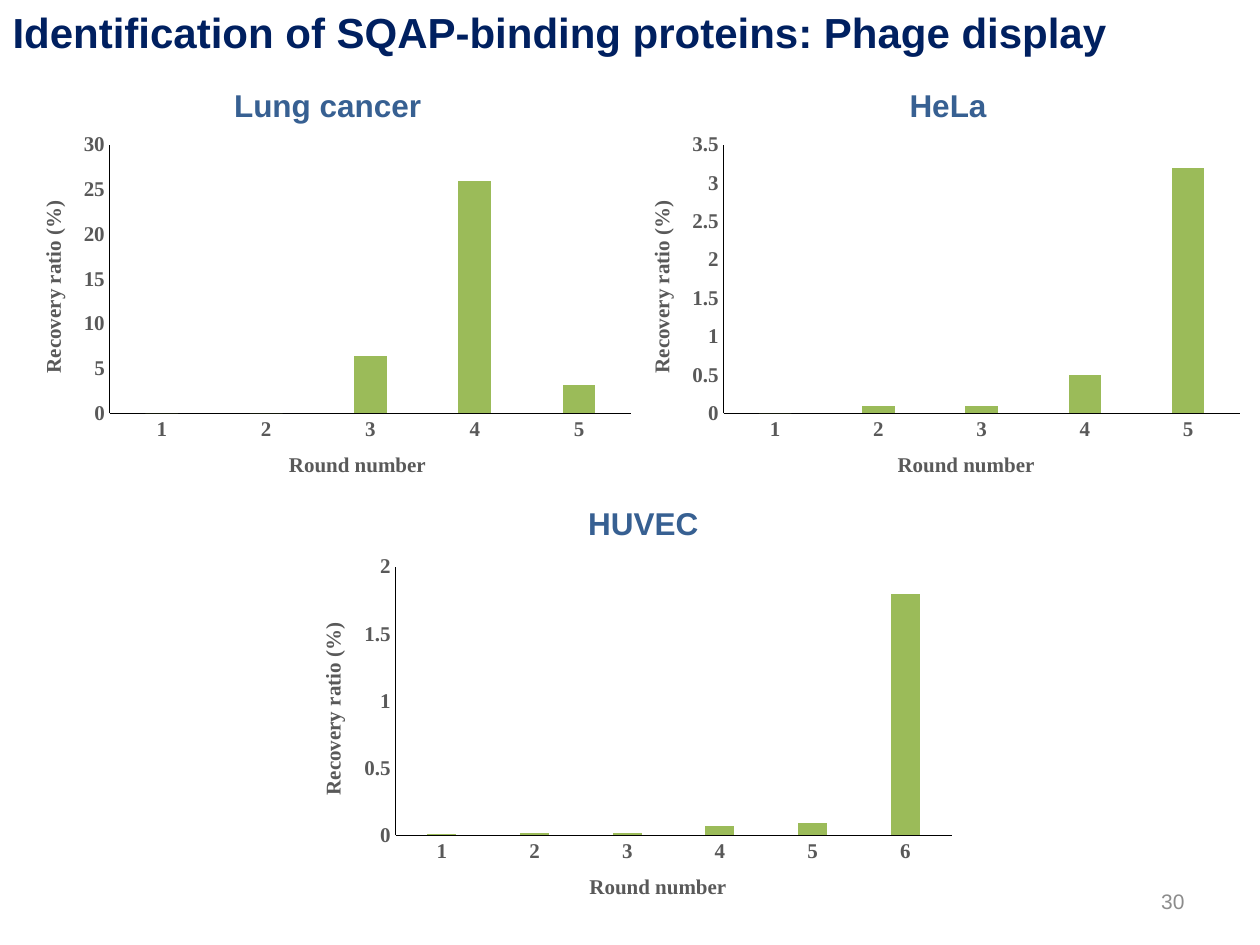
import pptx
import pptx.chart.data
from pptx.dml.color import RGBColor
from pptx.enum.chart import XL_CHART_TYPE, XL_TICK_MARK
from pptx.enum.text import MSO_ANCHOR, PP_ALIGN
from pptx.oxml.ns import qn
from pptx.util import Inches, Pt

NAVY = RGBColor(0x00, 0x20, 0x60)
BLUE = RGBColor(0x37, 0x60, 0x92)
GREEN = RGBColor(0x9B, 0xBB, 0x59)
DARK_GRAY = RGBColor(0x59, 0x59, 0x59)
PAGE_GRAY = RGBColor(0x8C, 0x8C, 0x8C)
BLACK = RGBColor(0, 0, 0)

TITLE = "Identification of SQAP-binding proteins: Phage display"
PAGE_NUMBER = "30"
CATEGORY_TITLE = "Round number"
VALUE_TITLE = "Recovery ratio (%)"
CHART_HEIGHT = 3

# Positions are (left, top, width) for charts, (left, top, width, height) for labels.
PANELS = [
    {"label": "Lung cancer", "label_at": (1.76, 0.63, 1.7, 0.4),
     "chart_at": (0.11, 1, 5), "ratios": (0, 0, 6.4, 26, 3.2), "scale": None},
    {"label": "HeLa", "label_at": (7.12, 0.63, 0.82, 0.4),
     "chart_at": (4.94, 1, 5), "ratios": (0, 0.1, 0.1, 0.5, 3.2), "scale": None},
    {"label": "HUVEC", "label_at": (4.57, 3.95, 1.09, 0.4),
     "chart_at": (2.33, 4.35, 5.33),
     "ratios": (0.01, 0.02, 0.02, 0.07, 0.09, 1.8), "scale": (2, 0.5)},
]


def place(shape, at):
    shape.left, shape.top, shape.width, shape.height = map(Inches, at)


def format_font(font, size, color, name="Arial", bold=True):
    font.name, font.size, font.bold = name, Pt(size), bold
    font.color.rgb = color


def write(frame, text, size=18, color=BLUE, name="Arial", bold=True,
          align=PP_ALIGN.LEFT, anchor=MSO_ANCHOR.TOP, wrap=False):
    frame.word_wrap = wrap
    frame.vertical_anchor = anchor
    para = frame.paragraphs[0]
    para.alignment = align
    span = para.add_run()
    span.text = text
    format_font(span.font, size, color, name, bold)


def add_text(page, at, text, **style):
    box = page.shapes.add_textbox(*map(Inches, at))
    write(box.text_frame, text, **style)


def style_axis(axis, title):
    axis.has_major_gridlines = False
    axis.major_tick_mark = axis.minor_tick_mark = XL_TICK_MARK.NONE
    axis.format.line.color.rgb = BLACK
    axis.format.line.width = Pt(0.75)
    format_font(axis.tick_labels.font, 12, DARK_GRAY, "Times New Roman")
    write(axis.axis_title.text_frame, title, size=12, color=DARK_GRAY,
          name="Times New Roman", align=PP_ALIGN.CENTER, wrap=True)


def add_recovery_chart(page, at, ratios, scale):
    data = pptx.chart.data.CategoryChartData()
    data.categories = [str(number) for number in range(1, len(ratios) + 1)]
    data.add_series("Series 1", ratios)
    chart = page.shapes.add_chart(
        XL_CHART_TYPE.COLUMN_CLUSTERED, *map(Inches, (*at, CHART_HEIGHT)), data).chart
    chart.has_title = chart.has_legend = False
    format_font(chart.font, 12, BLACK, "Times New Roman")

    plot = chart.plots[0]
    plot.gap_width, plot.overlap, plot.vary_by_categories = 219, -27, False
    fill = plot.series[0].format.fill
    fill.solid()
    fill.fore_color.rgb = GREEN

    style_axis(chart.category_axis, CATEGORY_TITLE)
    values = chart.value_axis
    style_axis(values, VALUE_TITLE)
    values.tick_labels.number_format = "General"
    values.tick_labels.number_format_is_linked = False
    for body in values.axis_title.element.iter(qn("a:bodyPr")):
        body.set("rot", "-5400000")
        body.set("vert", "horz")
    if scale:
        values.minimum_scale = 0
        values.maximum_scale, values.major_unit = scale


def main():
    deck = pptx.Presentation()
    deck.slide_width, deck.slide_height = Inches(10), Inches(7.5)
    page = deck.slides.add_slide(deck.slide_layouts[5])

    place(page.shapes.title, (0, 0, 8.96, 0.5))
    write(page.shapes.title.text_frame, TITLE, size=24, color=NAVY)
    add_text(page, (7.17, 6.95, 2.33, 0.4), PAGE_NUMBER, size=12, color=PAGE_GRAY,
             bold=False, align=PP_ALIGN.RIGHT, anchor=MSO_ANCHOR.MIDDLE, wrap=True)

    for panel in PANELS:
        add_recovery_chart(page, panel["chart_at"], panel["ratios"], panel["scale"])
    for panel in PANELS:
        add_text(page, panel["label_at"], panel["label"])

    deck.save("out.pptx")


if __name__ == "__main__":
    main()
